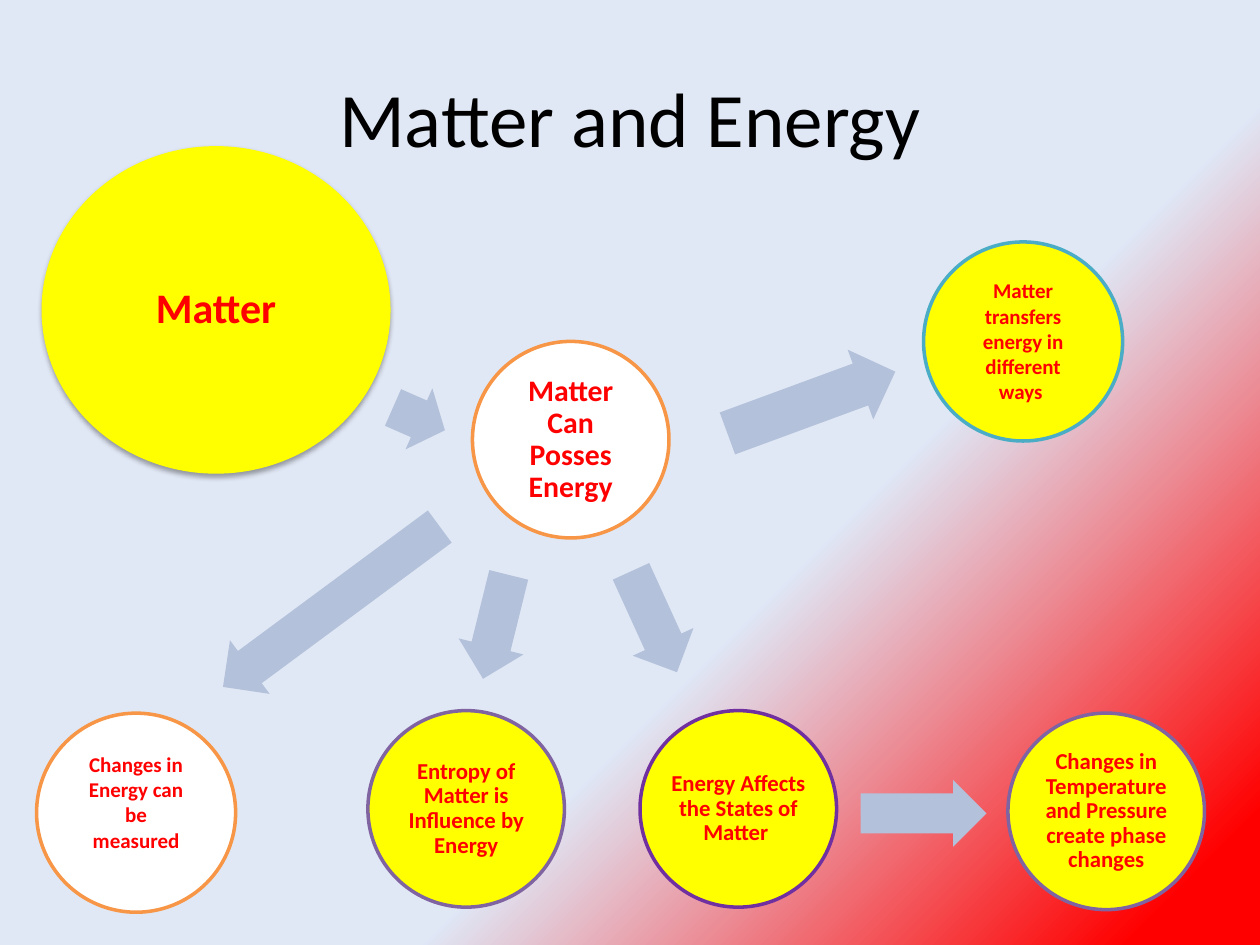
import pptx
import pptx.util
import pptx.oxml
import pptx.dml.color
import pptx.enum.shapes
import pptx.enum.text

Inches, Pt = pptx.util.Inches, pptx.util.Pt
KIND = pptx.enum.shapes.MSO_SHAPE
NS = 'xmlns:a="http://schemas.openxmlformats.org/drawingml/2006/main"'
RED, YELLOW, WHITE, BLUE = "FF0000", "FFFF00", "FFFFFF", "B3C1DB"
ORANGE, VIOLET = "F79646", "8064A2"

TITLE = "Matter and Energy"
STOPS = [(6, RED), (38, "DFE6F5"), (58, "E1E8F5")]

# text, left, top, width, height, fill, line, size
NODES = [
    ("Matter Can Posses Energy", 3.75, 2.71, 1.56, 1.56, WHITE, ORANGE, 17),
    ("Matter", 0.33, 1.16, 2.77, 2.6, YELLOW, None, 24),
    ("Energy Affects the States of Matter ", 5.08, 5.64, 1.56, 1.56,
     YELLOW, "7030A0", 13),
    ("Changes in Temperature and Pressure create phase changes",
     8, 5.66, 1.56, 1.56, YELLOW, VIOLET, 13),
    ("Entropy of Matter is Influence by Energy", 2.92, 5.64, 1.56, 1.56,
     YELLOW, VIOLET, 13),
]

# as above, then the bottom inset that lifts the text
LOOSE = [
    ("Matter transfers energy in different ways ", 7.33, 1.92, 1.58, 1.58,
     YELLOW, "4BACC6", 12, 0.03),
    ("Changes in Energy can be measured", 0.29, 5.66, 1.58, 1.58,
     WHITE, ORANGE, 12, 0.19),
]

# left, top, width, height, turn
ARROWS = [
    (3.1, 3.06, 0.45, 0.53, 23.7),
    (4.75, 4.67, 0.88, 0.53, 65.5),
    (6.83, 6.19, 1, 0.53, 0),
    (3.51, 4.71, 0.85, 0.53, 103.9),
    (1.56, 4.55, 2.14, 0.53, 143.5),
    (5.73, 2.9, 1.42, 0.59, 339.8),
]


def color(code):
    return pptx.dml.color.RGBColor.from_string(code)


def write(shape, text, size, code, bold, insets):
    frame = shape.text_frame
    frame.text = text
    frame.word_wrap = True
    frame.vertical_anchor = pptx.enum.text.MSO_ANCHOR.MIDDLE
    (frame.margin_left, frame.margin_top,
     frame.margin_right, frame.margin_bottom) = map(Inches, insets)
    para = frame.paragraphs[0]
    para.alignment = pptx.enum.text.PP_ALIGN.CENTER
    font = para.runs[0].font
    font.name, font.size, font.bold = "Calibri", Pt(size), bold
    font.color.rgb = color(code)
    return para


def draw(kind, box, fill, line=None):
    shape = slide.shapes.add_shape(kind, *map(Inches, box))
    shape.shadow.inherit = False
    shape.fill.solid()
    shape.fill.fore_color.rgb = color(fill)
    if line:
        shape.line.color.rgb = color(line)
        shape.line.width = Pt(2)
    else:
        shape.line.fill.background()
    return shape


deck = pptx.Presentation()
deck.slide_width, deck.slide_height = Inches(10), Inches(7.5)
slide = deck.slides.add_slide(deck.slide_layouts[6])

# Background glowing from the bottom right corner
back = slide.background.fill
back.gradient()
grad = slide.background._cSld.bg.bgPr[0]
marks = "".join(f'<a:gs pos="{at * 1000}"><a:srgbClr val="{code}"/></a:gs>'
                for at, code in STOPS)
grad.getparent().replace(grad, pptx.oxml.parse_xml(
    f'<a:gradFill {NS} rotWithShape="1"><a:gsLst>{marks}</a:gsLst>'
    '<a:path path="circle"><a:fillToRect l="100000" t="100000"/></a:path>'
    '<a:tileRect r="-100000" b="-100000"/></a:gradFill>'))

# Title
head = slide.shapes.add_textbox(*map(Inches, (0.5, 0.3, 9, 1.25)))
write(head, TITLE, 44, "000000", False, (0.1, 0.05, 0.1, 0.05))

# Arrows
for *box, turn in ARROWS:
    arrow = draw(KIND.RIGHT_ARROW, box, BLUE)
    arrow.adjustments[0], arrow.adjustments[1] = 0.6, 0.5
    arrow.rotation = turn

# Linked circles; the one without an outline casts a shadow
for text, *box, fill, line, size in NODES:
    node = draw(KIND.OVAL, box, fill, line)
    para = write(node, text, size, RED, True, [0.02] * 4)
    para.line_spacing = 0.9
    para.space_after = Pt(round(size * 0.35, 1))
    if not line:
        node._element.spPr.find(pptx.oxml.ns.qn("a:effectLst")).append(
            pptx.oxml.parse_xml(
                f'<a:outerShdw {NS} blurRad="{Pt(3.1)}" dist="{Pt(1.8)}" '
                'dir="5400000" rotWithShape="0"><a:srgbClr val="000000">'
                '<a:alpha val="35000"/></a:srgbClr></a:outerShdw>'))

# Loose circles
for text, *box, fill, line, size, low in LOOSE:
    node = draw(KIND.OVAL, box, fill, line)
    write(node, text, size, RED, True, (0.12, 0.02, 0.12, low))

deck.save("out.pptx")
